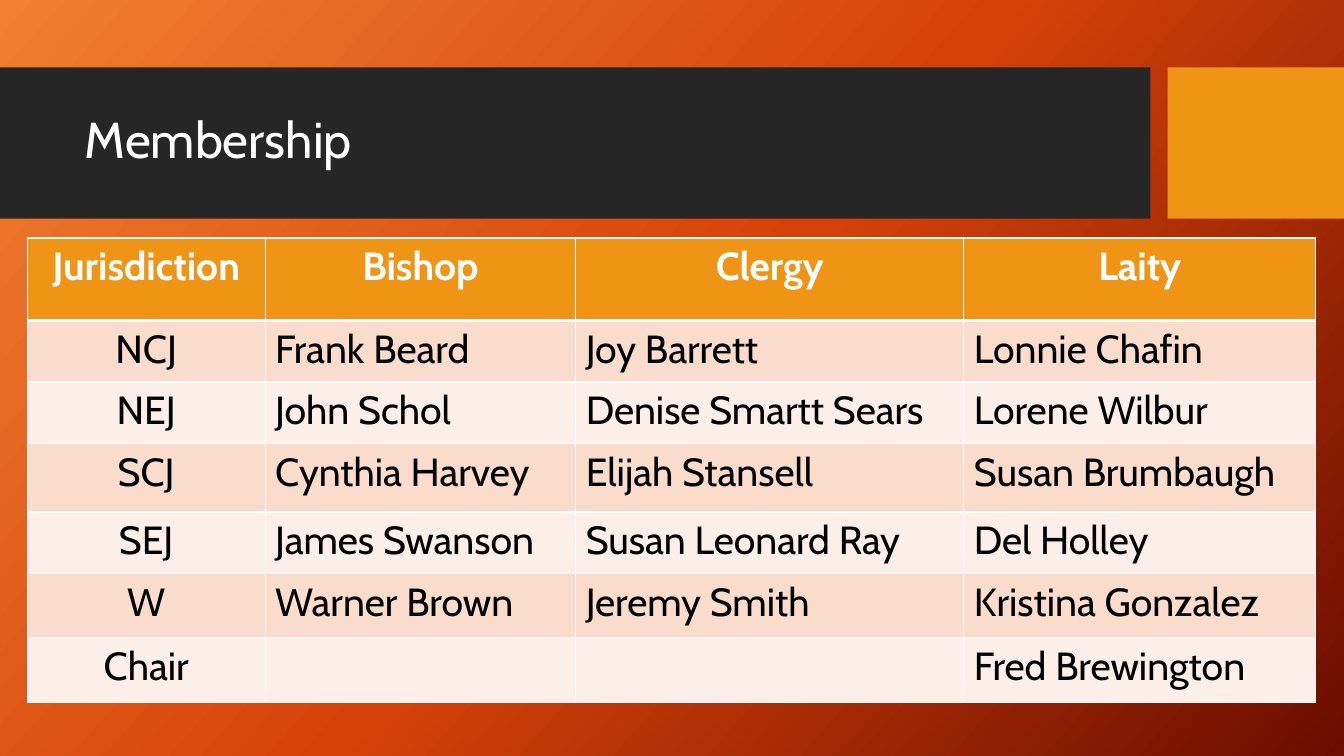
from copy import deepcopy
from dataclasses import dataclass

from lxml.etree import SubElement
from pptx import Presentation
from pptx.dml.color import RGBColor
from pptx.enum.shapes import MSO_SHAPE
from pptx.enum.text import MSO_ANCHOR, MSO_AUTO_SIZE, PP_ALIGN
from pptx.oxml.ns import qn
from pptx.slide import Slide
from pptx.table import _Cell
from pptx.text.text import _Paragraph
from pptx.util import Inches, Pt

WIDE, HIGH = Inches(13.33), Inches(7.5)
FONT = "Cabin"
WHITE, BLACK, GOLD, DARK = "FFFFFF", "000000", "F09415", "262626"
BANDS = ("F9DCCC", "FCEEE8")
STOPS = ((0, "F18031"), (0.5, "D54209"), (1, "6A0D00"))
COLS = (17.7, 23.11, 28.88, 26.18)
ROWS = (10.93, 8.13, 8.13, 9.07, 8.13, 8.53, 8.53)
DATA = (
    ("Jurisdiction", "Bishop", "Clergy", "Laity"),
    ("NCJ", "Frank Beard", "Joy Barrett", "Lonnie Chafin"),
    ("NEJ", "John Schol", "Denise Smartt Sears", "Lorene Wilbur"),
    ("SCJ", "Cynthia Harvey", "Elijah Stansell", "Susan Brumbaugh"),
    ("SEJ", "James Swanson", "Susan Leonard Ray", "Del Holley"),
    ("W", "Warner Brown", "Jeremy Smith", "Kristina Gonzalez"),
    ("Chair", "", "", "Fred Brewington"),
)


@dataclass(frozen=True)
class Area:
    """A box in percent of the slide's width and height."""
    left: float
    top: float
    width: float
    height: float

    def place(self) -> tuple[int, int, int, int]:
        """Return the box in slide units."""
        return (across(self.left), down(self.top),
                across(self.width), down(self.height))


@dataclass(frozen=True)
class Block:
    """A plain filled rectangle."""
    area: Area
    fill: str


BLOCKS = (
    Block(Area(0, 8.93, 85.6, 20), DARK),
    Block(Area(86.87, 8.93, 13.13, 20), GOLD),
)
TITLE = Area(5.55, 10.93, 78.84, 15.73)
GRID = Area(2.03, 31.47, sum(COLS), sum(ROWS))


def across(share: float) -> int:
    """Turn a percent of the width into a length."""
    return round(WIDE * share / 100)


def down(share: float) -> int:
    """Turn a percent of the height into a length."""
    return round(HIGH * share / 100)


def tint(code: str) -> RGBColor:
    """Turn a hex string into a colour."""
    return RGBColor.from_string(code)


def write(para: _Paragraph, text: str, size: int, code: str,
          bold: bool = False) -> None:
    """Add one run of text to a paragraph."""
    run = para.add_run()
    run.text = text
    run.font.name = FONT
    run.font.size = Pt(size)
    run.font.bold = bold
    run.font.color.rgb = tint(code)


def paint(slide: Slide) -> None:
    """Fill the background with the slanted gradient."""
    fill = slide.background.fill
    fill.gradient()
    fill.gradient_angle = 318
    stops = slide.element.find(".//" + qn("a:gsLst"))
    stops.append(deepcopy(stops[0]))
    for stop, (spot, code) in zip(fill.gradient_stops, STOPS):
        stop.position = spot
        stop.color.rgb = tint(code)


def draw(slide: Slide, block: Block) -> None:
    """Draw one rectangle."""
    shape = slide.shapes.add_shape(MSO_SHAPE.RECTANGLE, *block.area.place())
    shape.shadow.inherit = False
    shape.fill.solid()
    shape.fill.fore_color.rgb = tint(block.fill)
    shape.line.fill.background()


def head(slide: Slide, text: str) -> None:
    """Place the title in front of its band."""
    title = slide.shapes.title
    title.left, title.top, title.width, title.height = TITLE.place()
    slide.shapes[-1].element.addnext(title.element)
    frame = title.text_frame
    frame.word_wrap = True
    frame.auto_size = MSO_AUTO_SIZE.NONE
    frame.vertical_anchor = MSO_ANCHOR.MIDDLE
    para = frame.paragraphs[0]
    para.alignment = PP_ALIGN.LEFT
    para.line_spacing = 0.9
    write(para, text, 36, WHITE)


def edge(cell: _Cell, side: str, width: int) -> None:
    """Give one side of a cell a white border."""
    props = cell._tc.get_or_add_tcPr()
    line = SubElement(props, qn("a:ln" + side), w=str(Pt(width)))
    fill = SubElement(line, qn("a:solidFill"))
    SubElement(fill, qn("a:srgbClr"), val=WHITE)


def style(cell: _Cell, text: str, row: int, col: int) -> None:
    """Border, fill and write one cell."""
    top = row == 0
    thick = {(0, "B"), (1, "T")}
    for side in "LRTB":
        edge(cell, side, 3 if (row, side) in thick else 1)
    cell.fill.solid()
    cell.fill.fore_color.rgb = tint(GOLD if top else BANDS[(row - 1) % 2])
    if text:
        para = cell.text_frame.paragraphs[0]
        para.alignment = PP_ALIGN.CENTER if top or col == 0 else PP_ALIGN.LEFT
        write(para, text, 28, WHITE if top else BLACK, top)


def chart(slide: Slide) -> None:
    """Build the table of members."""
    table = slide.shapes.add_table(
        len(ROWS), len(COLS), *GRID.place()).table
    for col, share in zip(table.columns, COLS):
        col.width = across(share)
    for row, share in zip(table.rows, ROWS):
        row.height = down(share)
    for row, names in enumerate(DATA):
        for col, name in enumerate(names):
            style(table.cell(row, col), name, row, col)


def main() -> None:
    """Build and save the slide."""
    deck = Presentation()
    deck.slide_width, deck.slide_height = WIDE, HIGH
    slide = deck.slides.add_slide(deck.slide_layouts[5])
    paint(slide)
    for block in BLOCKS:
        draw(slide, block)
    head(slide, "Membership")
    chart(slide)
    deck.save("out.pptx")


if __name__ == "__main__":
    main()
